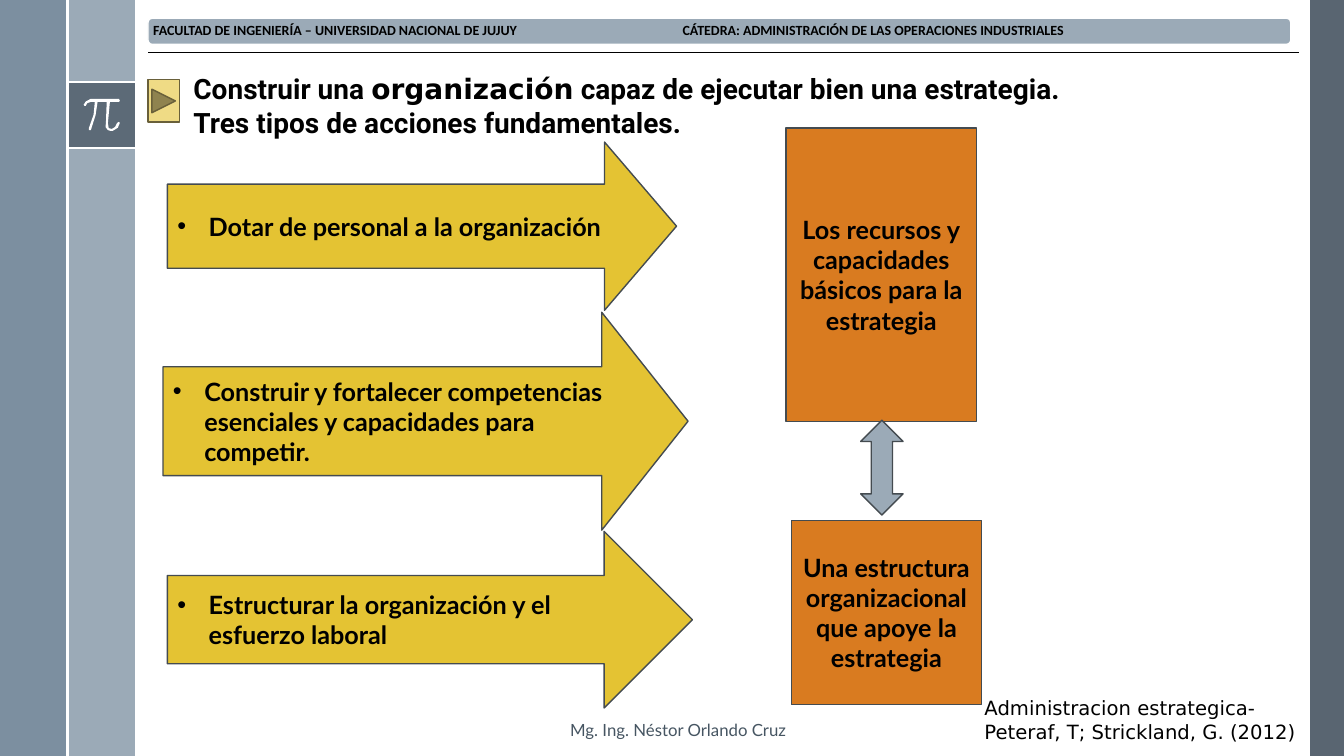
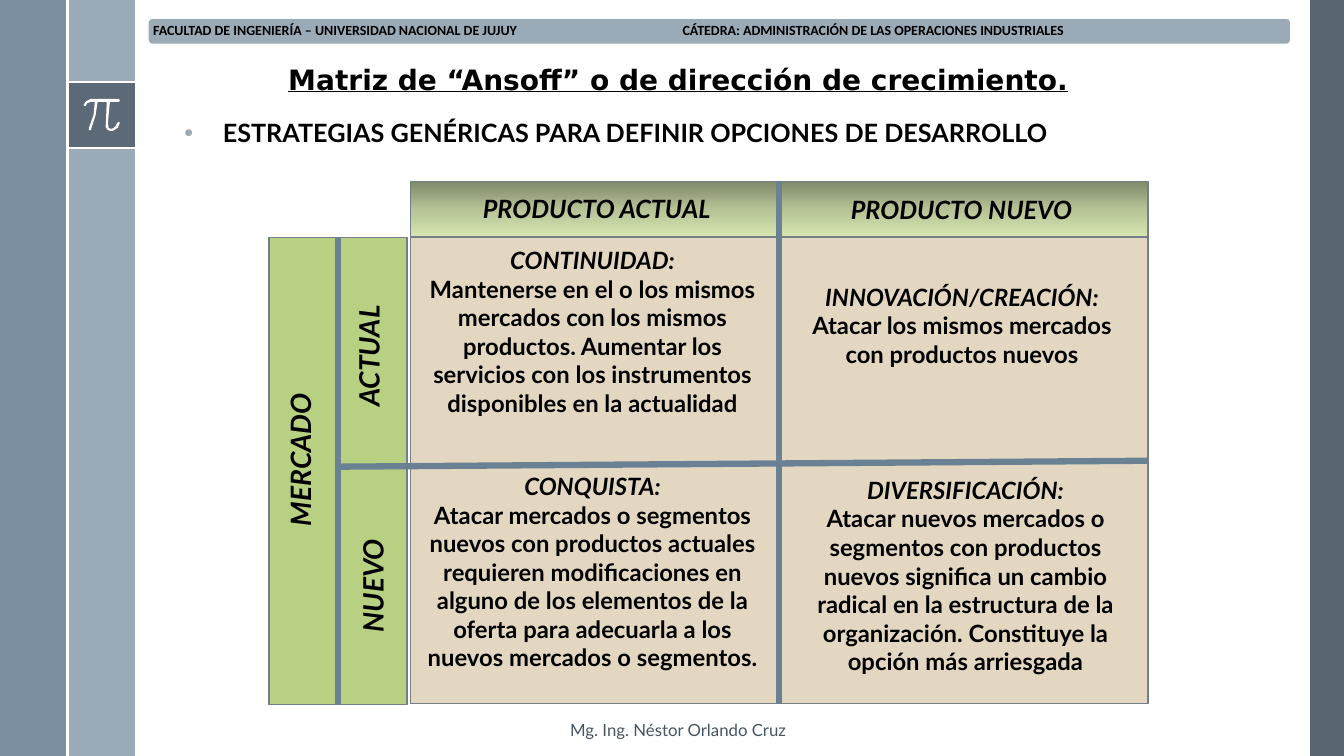
from copy import deepcopy

from lxml.etree import SubElement
from pptx import Presentation
from pptx.dml.color import RGBColor
from pptx.enum.shapes import MSO_CONNECTOR as Connector, MSO_SHAPE as Preset
from pptx.enum.text import MSO_ANCHOR as Anchor, MSO_AUTO_SIZE as AutoSize, PP_ALIGN as Align
from pptx.oxml.ns import qn
from pptx.util import Cm, Pt

BLACK = RGBColor(0x00, 0x00, 0x00)
WHITE = RGBColor(0xFF, 0xFF, 0xFF)
SLATE = RGBColor(0x47, 0x55, 0x62)
STEEL = RGBColor(0x6A, 0x80, 0x93)
MIST = RGBColor(0x9B, 0xAA, 0xB7)
FOOTER_GREY = RGBColor(0x46, 0x55, 0x62)
OUTLINE = RGBColor(0x44, 0x4B, 0x50)
GRID_LINE = RGBColor(0x73, 0x7E, 0x87)
GOLD = RGBColor(0xE4, 0xC3, 0x33)
PALE_GOLD = RGBColor(0xEF, 0xDB, 0x85)
DARK_GOLD = RGBColor(0x69, 0x60, 0x3A)
ORANGE = RGBColor(0xD9, 0x7B, 0x20)
SAND = RGBColor(0xE4, 0xD7, 0xC2)
GREEN = RGBColor(0xB8, 0xD0, 0x82)
HEADER_STOPS = [
    (0, RGBColor(0x7F, 0x88, 0x69)),
    (0.5, RGBColor(0xB4, 0xC2, 0x95)),
    (1, RGBColor(0xD6, 0xE6, 0xB0)),
]

WIDTH, HEIGHT = 33.87, 19.05
RAIL_LEFT, RAIL_WIDTH = 1.7, 1.7
TILE_TOP, TILE_BOTTOM = 2.06, 3.74

LABEL = {"name": "Lato", "size": Pt(18), "bold": True}
SIDE_LABEL = LABEL | {"size": Pt(20), "italic": True}
QUADRANT = LABEL | {"size": Pt(17)}
TITLE = {"name": "DejaVu Sans", "size": Pt(20), "bold": True}
CENTRED = {"alignment": Align.CENTER}
LEFT = {"alignment": Align.LEFT}

PI_OUTLINE = [
    (3, 2.49), (2.29, 2.49), (2.16, 2.56), (2.11, 2.64), (2.13, 2.67), (2.16, 2.67),
    (2.2, 2.6), (2.29, 2.57), (2.39, 2.57), (2.36, 2.89), (2.24, 3.23), (2.24, 3.28),
    (2.29, 3.28), (2.41, 2.9), (2.46, 2.57), (2.69, 2.57), (2.67, 3.1), (2.66, 3.2),
    (2.72, 3.28), (2.79, 3.3), (2.84, 3.3), (2.97, 3.22), (3.02, 3.1), (3, 3.07),
    (2.95, 3.1), (2.9, 3.2), (2.82, 3.25), (2.74, 3.23), (2.72, 3.1), (2.77, 2.57),
    (3, 2.57), (3.02, 2.54),
]


def apply(target, values):
    for name, value in values.items():
        setattr(target, name, value)


def write(shape, lines, font, layout=LEFT, color=BLACK):
    """Fill a shape with paragraphs; a line is a string or a list of (text, font changes)."""
    frame = shape.text_frame
    apply(frame, {"word_wrap": True, "auto_size": AutoSize.NONE})
    for index, line in enumerate(lines):
        para = frame.add_paragraph() if index else frame.paragraphs[0]
        apply(para, layout)
        for text, changes in [(line, {})] if isinstance(line, str) else line:
            span = para.add_run()
            span.text = text
            apply(span.font, font | changes)
            span.font.color.rgb = color


def add_bullets(shape, indent, color=BLACK):
    for para in shape.text_frame.paragraphs:
        props = para._p.get_or_add_pPr()
        props.set("marL", str(Cm(indent)))
        props.set("indent", str(-Cm(indent)))
        tint = SubElement(props, qn("a:buClr"))
        SubElement(tint, qn("a:srgbClr"), val=str(color))
        SubElement(props, qn("a:buFont"), typeface="Arial")
        SubElement(props, qn("a:buChar"), char="•")


def paint(shape, fill, outline=None, alpha=None):
    shape.shadow.inherit = False
    shape.fill.solid()
    shape.fill.fore_color.rgb = fill
    if alpha:
        tint = shape.element.xpath("./p:spPr/a:solidFill/a:srgbClr")[0]
        SubElement(tint, qn("a:alpha"), val=str(alpha * 1000))
    if outline is None:
        shape.line.fill.background()
    else:
        shape.line.color.rgb = outline
        shape.line.width = Pt(1)


def add_block(page, preset, box, fill, outline=None, alpha=None):
    shape = page.shapes.add_shape(preset, *map(Cm, box))
    paint(shape, fill, outline, alpha)
    return shape


def add_line(page, start, end, color, width):
    line = page.shapes.add_connector(Connector.STRAIGHT, *map(Cm, (*start, *end)))
    line.line.color.rgb = color
    line.line.width = Pt(width)
    SubElement(line.element.spPr, qn("a:effectLst"))
    return line


def add_divider(page, upper, lower):
    """Join the middle of one block's top to the middle of another's bottom."""
    line = add_line(page, (0, 0), (0, 0), STEEL, 4.5)
    line.begin_connect(upper, 0)
    line.end_connect(lower, 2)


def add_text(page, box, lines, font, layout=LEFT, color=BLACK, rotation=0):
    label = page.shapes.add_textbox(*map(Cm, box))
    label.rotation = rotation
    write(label, lines, font, layout, color)


def fill_placeholder(holder, box, lines, font, layout=LEFT):
    apply(holder, dict(zip(("left", "top", "width", "height"), map(Cm, box))))
    holder.text_frame.vertical_anchor = Anchor.TOP
    write(holder, lines, font, layout)


def add_rails(deck):
    """Draw the side rails once and hand them to the slide master."""
    page = deck.slides[0]
    existing = {shape.shape_id for shape in page.shapes}
    for box, fill, alpha in [
        ((33.02, 0, WIDTH - 33.02, HEIGHT), SLATE, 90),
        ((RAIL_LEFT, 0, RAIL_WIDTH, HEIGHT), MIST, None),
        ((0, 0, RAIL_LEFT, HEIGHT), STEEL, 88),
        ((RAIL_LEFT, TILE_TOP, RAIL_WIDTH, TILE_BOTTOM - TILE_TOP), SLATE, 75),
    ]:
        add_block(page, Preset.RECTANGLE, box, fill, alpha=alpha)
    for level in (TILE_TOP, TILE_BOTTOM):
        add_line(page, (RAIL_LEFT, level), (RAIL_LEFT + RAIL_WIDTH, level), WHITE, 1.5)
    start, *rest = [(Cm(x), Cm(y)) for x, y in PI_OUTLINE]
    builder = page.shapes.build_freeform(*start)
    builder.add_line_segments(rest, close=True)
    paint(builder.convert_to_shape(), WHITE)
    add_line(page, (RAIL_LEFT, 0), (RAIL_LEFT, HEIGHT), WHITE, 1.5)

    tree = deck.slide_master.shapes.element
    for shape in list(page.shapes):
        if shape.shape_id not in existing:
            shape.element.xpath(".//p:cNvPr")[0].set("id", str(100 + shape.shape_id))
            tree.append(shape.element)


def add_band_and_footer(page):
    band = add_block(page, Preset.ROUNDED_RECTANGLE, (3.73, 0.46, 28.8, 0.66), MIST, WHITE)
    apply(band.text_frame, dict.fromkeys(
        ("margin_left", "margin_right", "margin_top", "margin_bottom"), Cm(0.1)))
    write(band, ["FACULTAD DE INGENIERÍA – UNIVERSIDAD NACIONAL DE JUJUY\t"
                 "CÁTEDRA: ADMINISTRACIÓN DE LAS OPERACIONES INDUSTRIALES"],
          {"name": "Calibri", "size": Pt(10), "bold": True}, LEFT | {"line_spacing": 0.9})
    props = band.text_frame.paragraphs[0]._p.get_or_add_pPr()
    stops = SubElement(props, qn("a:tabLst"))
    SubElement(stops, qn("a:tab"), pos=str(Cm(13.34)), algn="l")
    add_text(page, (14.12, 18.01, 8.2, 0.76), ["Mg. Ing. Néstor Orlando Cruz"],
             {"name": "Lato", "size": Pt(12)}, color=FOOTER_GREY)


def build_actions(page):
    add_band_and_footer(page)
    add_line(page, (3.73, 1.32), (32.74, 1.32), BLACK, 0.5)
    add_block(page, Preset.ACTION_BUTTON_FORWARD_OR_NEXT, (3.73, 2.01, 0.79, 1.07),
              PALE_GOLD, DARK_GOLD)
    fill_placeholder(page.shapes.title, (4.62, 1.68, 27.2, 1.96), [
        [("Construir una ", {}), ("organización", {"name": "DejaVu Sans"}),
         (" capaz de ejecutar bien una estrategia.", {})],
        "Tres tipos de acciones fundamentales.",
    ], TITLE | {"name": "Roboto"})
    for box, head, text in [
        ((4.22, 13.39, 13.23, 4.45), 0.5, "Estructurar la organización y el esfuerzo laboral"),
        ((4.11, 7.87, 13.23, 5.49), 0.396,
         "Construir y fortalecer competencias esenciales y capacidades para competir."),
        ((4.22, 3.58, 12.83, 4.24), 0.428, "Dotar de personal a la organización"),
    ]:
        arrow = add_block(page, Preset.RIGHT_ARROW, box, GOLD, OUTLINE)
        arrow.adjustments[1] = head
        write(arrow, [text], LABEL)
        add_bullets(arrow, 0.79)
    for box, lines in [
        ((19.81, 3.23, 4.8, 7.39),
         ["Los recursos y", "capacidades", "básicos para la", "estrategia"]),
        ((19.94, 13.11, 4.8, 4.65),
         ["Una estructura", "organizacional", "que apoye la", "estrategia"]),
    ]:
        write(add_block(page, Preset.RECTANGLE, box, ORANGE, OUTLINE), lines, LABEL, CENTRED)
    add_block(page, Preset.UP_DOWN_ARROW, (21.69, 10.59, 1.07, 2.39), MIST, OUTLINE)
    add_text(page, (24.56, 17.42, 9.19, 1.45),
             ["Administracion estrategica- Peteraf, T; Strickland, G. (2012)"],
             {"name": "DejaVu Sans", "size": Pt(14)})


def add_matrix_grid(page):
    body = add_block(page, Preset.RECTANGLE, (10.34, 5.97, 18.59, 11.76), SAND, GRID_LINE)
    market = add_block(page, Preset.RECTANGLE, (6.78, 5.99, 3.48, 11.76), GREEN, GRID_LINE)
    header = add_block(page, Preset.RECTANGLE, (10.34, 4.57, 18.59, 1.4), GREEN, GRID_LINE)
    header.fill.gradient()
    header.fill.gradient_angle = 270
    stop_list = header.element.xpath(".//a:gsLst")[0]
    stop_list.insert(1, deepcopy(stop_list[0]))
    for stop, (position, color) in zip(header.fill.gradient_stops, HEADER_STOPS):
        stop.position = position
        stop.color.rgb = color
    add_line(page, (8.48, 11.76), (28.93, 11.61), STEEL, 4.5)
    add_divider(page, header, body)
    add_divider(page, market, market)


def build_matrix(page):
    add_band_and_footer(page)
    fill_placeholder(page.shapes.title, (7.01, 1.45, 20.8, 1.12),
                     ["Matriz de “Ansoff” o de dirección de crecimiento."],
                     TITLE | {"underline": True})
    subtitle = page.placeholders[1]
    fill_placeholder(subtitle, (4.39, 2.84, 28.14, 1.9),
                     ["ESTRATEGIAS GENÉRICAS PARA DEFINIR OPCIONES DE DESARROLLO"],
                     LABEL, LEFT | {"space_before": Pt(10)})
    add_bullets(subtitle, 0.97, MIST)
    add_matrix_grid(page)
    for box, text in [
        ((10.34, 4.75, 9.4, 1.02), "PRODUCTO ACTUAL"),
        ((19.53, 4.78, 9.4, 1.02), "PRODUCTO NUEVO"),
    ]:
        add_text(page, box, [text], LABEL | {"italic": True}, CENTRED)
    for box, text in [
        ((6.4, 8.41, 5.79, 1.12), "ACTUAL"),
        ((6.71, 14.2, 5.38, 1.12), "NUEVO"),
        ((2.87, 11.02, 9.4, 1.12), "MERCADO"),
    ]:
        add_text(page, box, [text], SIDE_LABEL, CENTRED, rotation=270)
    for box, name, text in [
        ((10.34, 6.07, 9.19, 4.62), "CONTINUIDAD:",
         "Mantenerse en el o los mismos mercados con los mismos productos. Aumentar los "
         "servicios con los instrumentos disponibles en la actualidad"),
        ((19.94, 6.99, 8.61, 2.44), "INNOVACIÓN/CREACIÓN:",
         "Atacar los mismos mercados con productos nuevos"),
        ((10.34, 11.76, 9.19, 5.33), "CONQUISTA:",
         "Atacar mercados o segmentos nuevos con productos actuales requieren modificaciones "
         "en alguno de los elementos de la oferta para adecuarla a los nuevos mercados o "
         "segmentos."),
        ((19.74, 11.86, 9.19, 5.33), "DIVERSIFICACIÓN:",
         "Atacar nuevos mercados o segmentos con productos nuevos significa un cambio radical "
         "en la estructura de la organización. Constituye la opción más arriesgada"),
    ]:
        add_text(page, box, [[(name, {"italic": True})], text], QUADRANT, CENTRED)


def main():
    deck = Presentation()
    apply(deck, {"slide_width": Cm(WIDTH), "slide_height": Cm(HEIGHT)})
    title_only, title_and_body = deck.slide_layouts[5], deck.slide_layouts[1]
    actions = deck.slides.add_slide(title_only)
    add_rails(deck)
    build_actions(actions)
    build_matrix(deck.slides.add_slide(title_and_body))
    deck.save("out.pptx")


if __name__ == "__main__":
    main()
